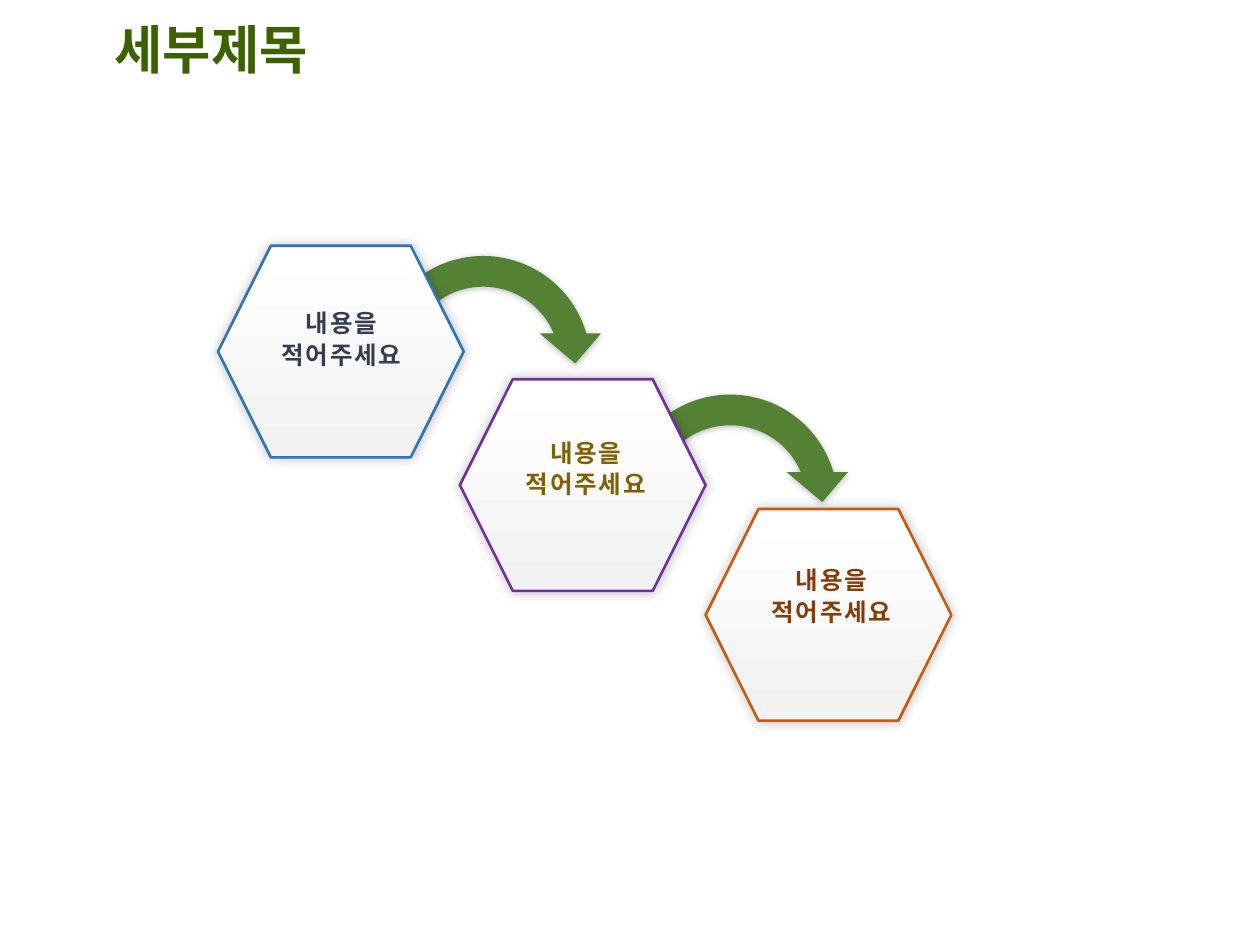
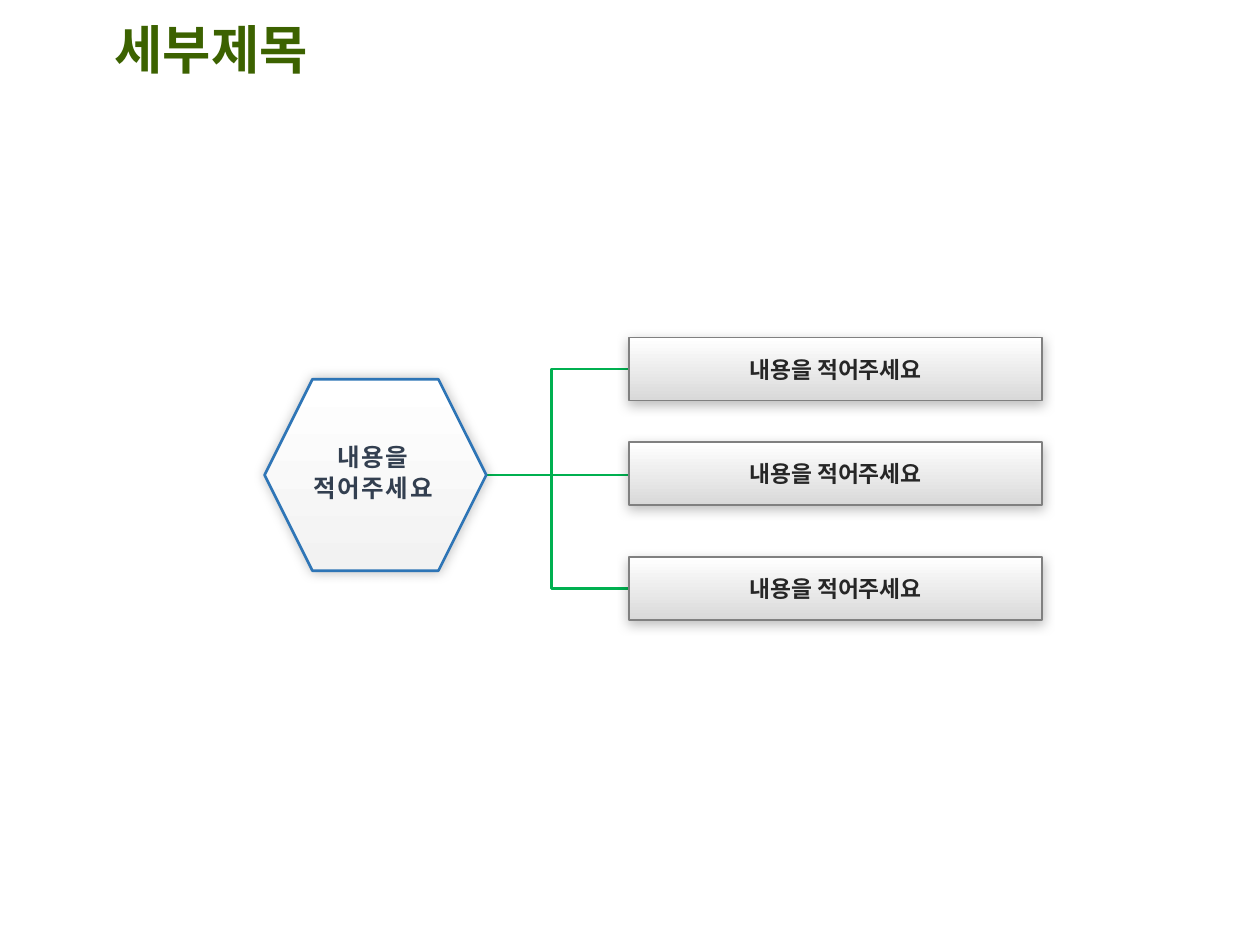
from lxml import etree
from pptx import Presentation, util as u
from pptx.dml.color import RGBColor
from pptx.enum import shapes, text
from pptx.oxml import ns

TITLE_GREEN = RGBColor(0x3C, 0x62, 0x00)
ARROW_GREEN = RGBColor(0x54, 0x82, 0x35)
BRANCH_GREEN = RGBColor(0x00, 0xB0, 0x50)
BLUE = RGBColor(0x2E, 0x75, 0xB6)
NAVY = RGBColor(0x33, 0x3F, 0x50)
PURPLE = RGBColor(0x70, 0x30, 0xA0)
OLIVE = RGBColor(0x80, 0x60, 0x00)
ORANGE = RGBColor(0xC5, 0x5A, 0x11)
BROWN = RGBColor(0x84, 0x3C, 0x0B)
WHITE = RGBColor(0xFF, 0xFF, 0xFF)
PALE = RGBColor(0xF2, 0xF2, 0xF2)
SILVER = RGBColor(0xD9, 0xD9, 0xD9)
GREY = RGBColor(0x80, 0x80, 0x80)
INK = RGBColor(0x26, 0x26, 0x26)

COLUMNS, ROWS = 100, 75
TITLE_FONT, BODY_FONT = "Calibri", "Noto Sans CJK KR"
HEADING = "세부제목"
PROMPT = ("내용을", "적어주세요")


class Deck:
    """Draws styled elements on the current slide, placed by grid columns and rows."""

    def __init__(self):
        self.prs = Presentation()
        self.prs.slide_width, self.prs.slide_height = u.Inches(10), u.Inches(7.5)
        self.slide = None

    def place(self, *lengths):
        cells = (self.prs.slide_width / COLUMNS, self.prs.slide_height / ROWS)
        return [u.Emu(round(length * cells[i % 2])) for i, length in enumerate(lengths)]

    def style(self, paragraph, size, color, font=BODY_FONT, align=text.PP_ALIGN.CENTER, tracking=0):
        paragraph.alignment = align
        face = paragraph.font
        face.name, face.size, face.bold = font, u.Pt(size), True
        face.color.rgb = color
        defaults = paragraph._p.pPr.find(ns.qn("a:defRPr"))
        etree.SubElement(defaults, ns.qn("a:ea")).set("typeface", BODY_FONT)
        if tracking:
            defaults.set("spc", str(tracking * 100))

    def new_slide(self, heading):
        self.slide = self.prs.slides.add_slide(self.prs.slide_layouts[5])
        title = self.slide.shapes.title
        title.left, title.top, title.width, title.height = self.place(8.1, 1.3, 86.2, 5.7)
        frame = title.text_frame
        frame.text = heading
        frame.auto_size = text.MSO_AUTO_SIZE.NONE
        frame.vertical_anchor = text.MSO_ANCHOR.MIDDLE
        frame.paragraphs[0].line_spacing = 0.9
        self.style(frame.paragraphs[0], 30, TITLE_GREEN, TITLE_FONT, text.PP_ALIGN.LEFT)

    def shadow(self, shape, blur, distance, angle):
        shape.shadow.inherit = False
        effects = shape._element.spPr.find(ns.qn("a:effectLst"))
        outer = etree.SubElement(effects, ns.qn("a:outerShdw"), blurRad=str(u.Pt(blur)),
                                 dist=str(u.Pt(distance)), dir=str(angle * 60000),
                                 algn="ctr", rotWithShape="0")
        black = etree.SubElement(outer, ns.qn("a:srgbClr"), val="000000")
        etree.SubElement(black, ns.qn("a:alpha"), val="25000")

    def arrow(self, column, row, size):
        curve = self.slide.shapes.add_shape(
            shapes.MSO_SHAPE.CIRCULAR_ARROW, *self.place(column, row, size, size))
        curve.fill.solid()
        curve.fill.fore_color.rgb = ARROW_GREEN
        curve.line.fill.background()
        self.shadow(curve, 4, 1, 90)

    def panel(self, kind, area, bottom, outline, weight, drop):
        panel = self.slide.shapes.add_shape(kind, *self.place(*area))
        panel.fill.gradient()
        panel.fill.gradient_angle = 270
        for stop, color in zip(panel.fill.gradient_stops, (WHITE, bottom)):
            stop.color.rgb = color
        panel.line.color.rgb = outline
        panel.line.width = u.Pt(weight)
        self.shadow(panel, 7, *drop)
        return panel

    def hexagon(self, column, row, width, height, outline):
        self.panel(shapes.MSO_SHAPE.HEXAGON, (column, row, width, height),
                   PALE, outline, 1.5, (0, 0))

    def bar(self, column, row, width, height, caption):
        bar = self.panel(shapes.MSO_SHAPE.RECTANGLE, (column, row, width, height),
                         SILVER, GREY, 1, (2, 90))
        bar.text_frame.text = caption
        bar.text_frame.vertical_anchor = text.MSO_ANCHOR.MIDDLE
        self.style(bar.text_frame.paragraphs[0], 13, INK)

    def label(self, column, row, color):
        frame = self.slide.shapes.add_textbox(*self.place(column, row, 17.2, 6.1)).text_frame
        frame.word_wrap = True
        frame.auto_size = text.MSO_AUTO_SIZE.SHAPE_TO_FIT_TEXT
        frame.text = "\n".join(PROMPT)
        for paragraph in frame.paragraphs:
            paragraph.line_spacing = u.Pt(18)
            self.style(paragraph, 14, color, tracking=1)

    def branch(self, kind, *ends):
        branch = self.slide.shapes.add_connector(kind, *self.place(*ends))
        branch.line.color.rgb = BRANCH_GREEN
        branch.line.width = u.Pt(1.5)
        etree.SubElement(branch._element.spPr, ns.qn("a:effectLst"))


def stepped_process(deck):
    deck.new_slide(HEADING)
    for column, row in ((48.2, 30.1), (28.6, 19.1)):
        deck.arrow(column, row, 19.5)
    for column, row, outline in ((17.3, 19.5, BLUE), (36.5, 30.1, PURPLE), (56, 40.4, ORANGE)):
        deck.hexagon(column, row, 19.5, 16.8, outline)
    for column, row, color in ((18.5, 23.8, NAVY), (37.9, 34.1, OLIVE), (57.4, 44.2, BROWN)):
        deck.label(column, row, color)


def branching_topic(deck):
    deck.new_slide(HEADING)
    bar_rows, bar_height, axis = (26.8, 35.1, 44.2), 5, 37.7
    for row in (bar_rows[2], bar_rows[0]):
        deck.branch(shapes.MSO_CONNECTOR.ELBOW, 34.8, axis, 52.7, row + bar_height / 2)
    deck.branch(shapes.MSO_CONNECTOR.STRAIGHT, 36.6, axis, 53, axis)
    deck.hexagon(21, 30.1, 17.6, 15.2, BLUE)
    deck.label(21, 34.4, NAVY)
    for row in bar_rows:
        deck.bar(49.9, row, 32.8, bar_height, " ".join(PROMPT))


def main():
    deck = Deck()
    stepped_process(deck)
    branching_topic(deck)
    deck.prs.save("out.pptx")


if __name__ == "__main__":
    main()
